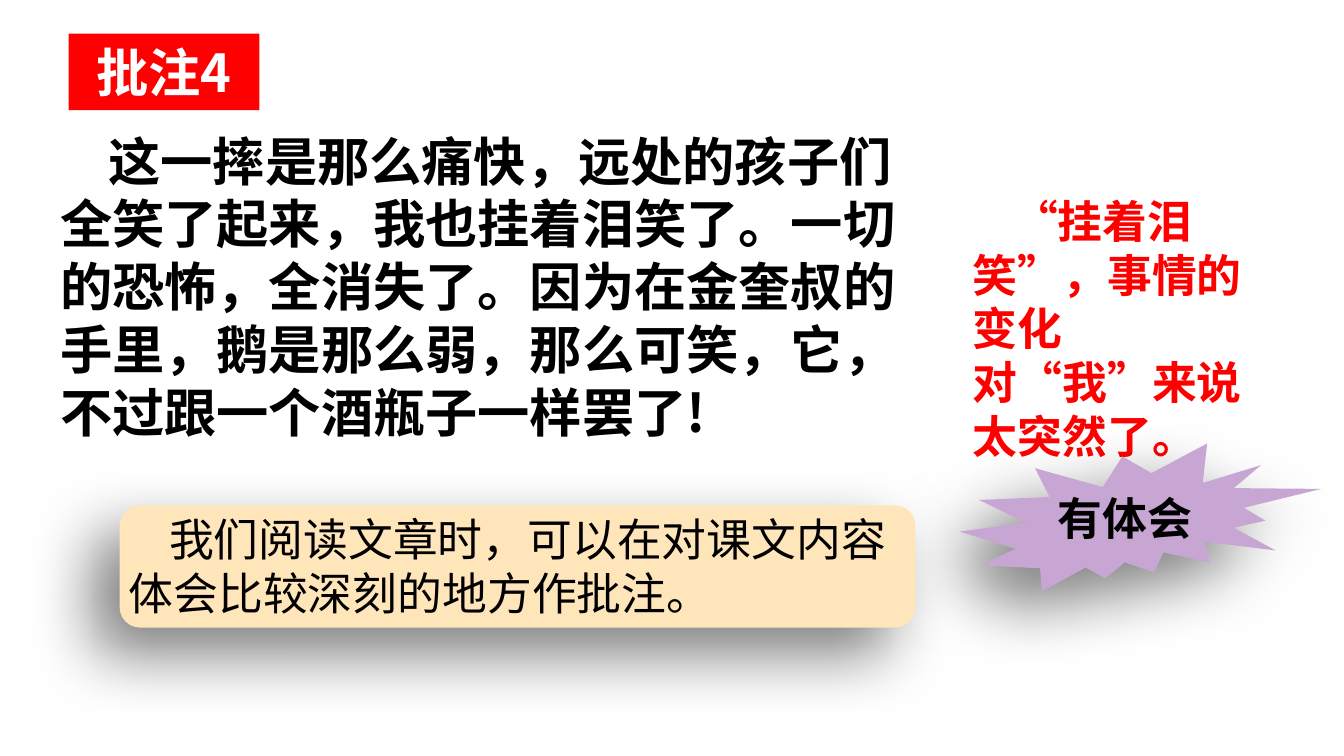
import pptx
import pptx.dml.color
import pptx.enum.lang
import pptx.enum.shapes
import pptx.enum.text
import pptx.oxml
import pptx.oxml.ns
import pptx.util

Inches = pptx.util.Inches
Shape = pptx.enum.shapes.MSO_SHAPE
Align = pptx.enum.text.PP_ALIGN
Anchor = pptx.enum.text.MSO_ANCHOR
FONT = "Noto Sans CJK SC"
COLORS = {"black": "000000", "white": "FFFFFF", "red": "FF0000",
          "lilac": "C7A6D3", "cream": "FFE5BA"}


def color(name):
    return pptx.dml.color.RGBColor.from_string(COLORS[name])


def write(shape, text, size, ink, bold=True, indent=0, align=Align.LEFT,
          anchor=Anchor.TOP, wrap=True):
    frame = shape.text_frame
    frame.word_wrap = wrap
    frame.auto_size = pptx.enum.text.MSO_AUTO_SIZE.NONE
    frame.vertical_anchor = anchor
    frame.text = text
    para = frame.paragraphs[0]
    para.alignment = align
    properties = para._p.get_or_add_pPr()
    properties.set("marL", "0")
    properties.set("indent", str(Inches(indent)))
    font = para.font
    font.name, font.size, font.bold = FONT, pptx.util.Pt(size), bold
    font.color.rgb = color(ink)
    font.language_id = pptx.enum.lang.MSO_LANGUAGE_ID.SIMPLIFIED_CHINESE
    latin = properties.find(".//" + pptx.oxml.ns.qn("a:latin"))
    latin.addnext(pptx.oxml.parse_xml(
        f'<a:ea {pptx.oxml.ns.nsdecls("a")} typeface="{FONT}"/>'))


def add_text(shapes, box, text, size, ink, **style):
    write(shapes.add_textbox(*map(Inches, box)), text, size, ink, **style)


def add_shadowed_shape(shapes, kind, box, fill):
    """Add a borderless shape with a soft shadow to the lower left."""
    shape = shapes.add_shape(kind, *map(Inches, box))
    shape.fill.solid()
    shape.fill.fore_color.rgb = color(fill)
    shape.line.fill.background()
    shape.shadow.inherit = False
    effects = shape._element.spPr.find(pptx.oxml.ns.qn("a:effectLst"))
    effects.append(pptx.oxml.parse_xml(
        f'<a:outerShdw {pptx.oxml.ns.nsdecls("a")} blurRad="{pptx.util.Pt(35)}" '
        f'dist="{pptx.util.Pt(20)}" dir="8100000" algn="tr" rotWithShape="0">'
        f'<a:srgbClr val="{COLORS["black"]}"><a:alpha val="50000"/></a:srgbClr>'
        '</a:outerShdw>'))


def place_title(page, box):
    title = page.shapes.title
    title.left, title.top, title.width, title.height = map(Inches, box)
    title.fill.solid()
    title.fill.fore_color.rgb = color("red")
    write(title, "批注4", 28, "white", align=Align.CENTER, anchor=Anchor.MIDDLE)


def place_passage(page, box):
    add_text(page.shapes, box,
             "这一摔是那么痛快，远处的孩子们全笑了起来，我也挂着泪笑了。"
             "一切的恐怖，全消失了。因为在金奎叔的手里，鹅是那么弱，"
             "那么可笑，它，不过跟一个酒瓶子一样罢了!",
             28, "black", indent=0.36)


def place_comment(page, box):
    add_text(page.shapes, box,
             "“挂着泪笑”，事情的变化对“我”来说太突然了。",
             24, "red", indent=0.3)


def place_burst(page, box):
    left, top, width, height = box
    group = page.shapes.add_group_shape()
    add_shadowed_shape(group.shapes, Shape.EXPLOSION2, box, "lilac")
    add_text(group.shapes, (left + 0.63, top + 0.3, 1.22, 0.5),
             "有体会", 24, "black", wrap=False)


def place_advice(page, box):
    left, top, width, height = box
    group = page.shapes.add_group_shape()
    add_shadowed_shape(group.shapes, Shape.ROUNDED_RECTANGLE, box, "cream")
    add_text(group.shapes, (left - 0.03, top, width + 0.03, height),
             "我们阅读文章时，可以在对课文内容体会比较深刻的地方作批注。",
             24, "black", bold=False, indent=0.3)


def main():
    deck = pptx.Presentation()
    deck.slide_width = Inches(10)
    deck.slide_height = deck.slide_width * 9 // 16
    page = deck.slides.add_slide(deck.slide_layouts.get_by_name("Title Only"))
    place_passage(page, (0.35, 0.91, 6.66, 2.46))
    place_comment(page, (7.14, 1.39, 2.28, 1.72))
    place_burst(page, (7.14, 3.3, 2.69, 1.1))
    place_advice(page, (0.89, 3.76, 5.92, 0.91))
    place_title(page, (0.51, 0.25, 1.42, 0.57))
    deck.save("out.pptx")


if __name__ == "__main__":
    main()
